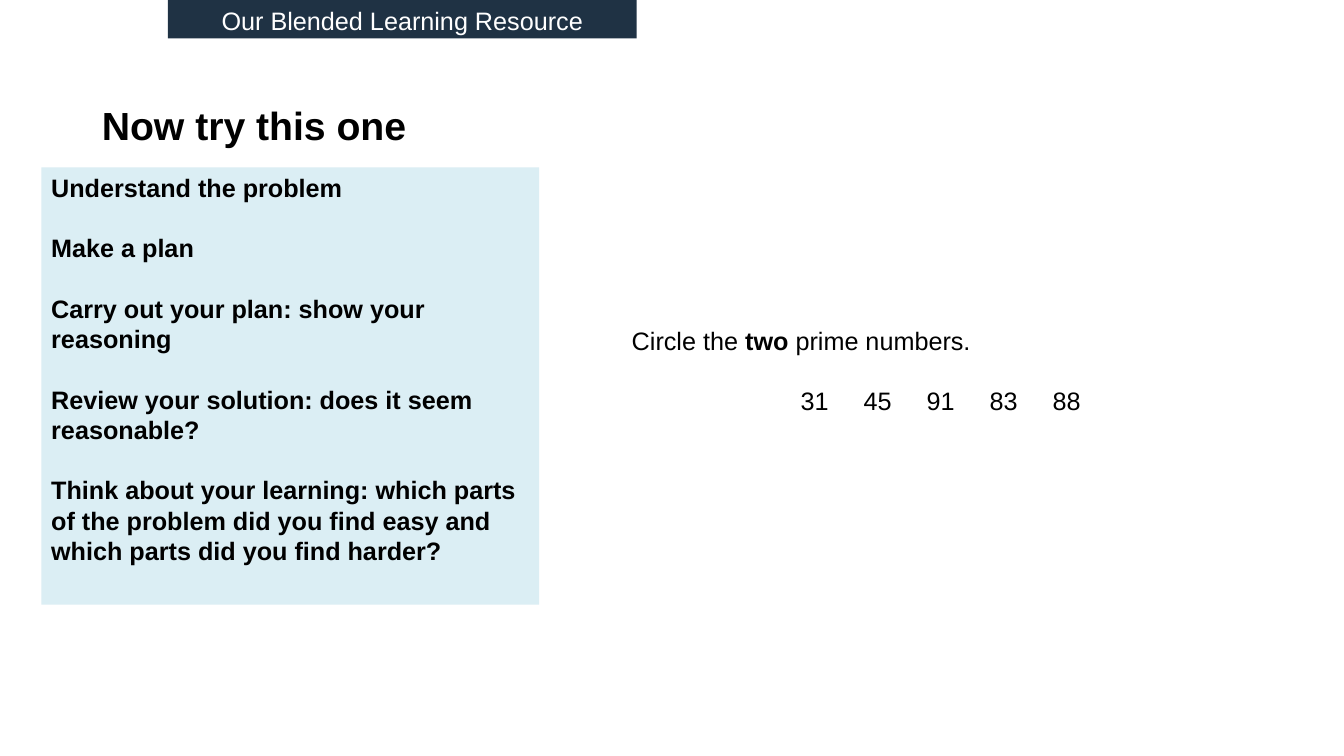
from lxml import etree
from pptx import Presentation
from pptx.dml.color import RGBColor
from pptx.enum import shapes, text
from pptx.oxml import ns
from pptx.util import Pt

BLACK = RGBColor(0, 0, 0)
WHITE = RGBColor(255, 255, 255)
NAVY = RGBColor(0x1F, 0x32, 0x44)
PALE_BLUE = RGBColor(0xDB, 0xEE, 0xF4)

STEPS = [
    "Understand the problem",
    "Make a plan",
    "Carry out your plan: show your reasoning",
    "Review your solution: does it seem reasonable?",
    "Think about your learning: which parts of the problem did you find "
    "easy and which parts did you find harder?",
]
NUMBERS = ["31", "45", "91", "83", "88"]
LINE_GAP = 21.6


def format_runs(p, size=18, color=BLACK, bold=False):
    for r in p.runs:
        r.font.name = "Arial"
        r.font.size = Pt(size)
        r.font.bold = bold
        r.font.color.rgb = color


def add_box(s, left, top, width, height, fill, anchor=text.MSO_ANCHOR.TOP):
    sp = s.shapes.add_shape(shapes.MSO_SHAPE.RECTANGLE,
                            Pt(left), Pt(top), Pt(width), Pt(height))
    sp.shadow.inherit = False
    sp.fill.solid()
    sp.fill.fore_color.rgb = fill
    sp.line.fill.background()
    sp.text_frame.word_wrap = True
    sp.text_frame.vertical_anchor = anchor
    return sp


def add_paragraph(tf, content, first=False, align=text.PP_ALIGN.LEFT, **style):
    p = tf.paragraphs[0] if first else tf.add_paragraph()
    p.text = content
    p.alignment = align
    if not first:
        p.space_before = Pt(LINE_GAP)
    format_runs(p, **style)
    return p


def add_tab_stops(p, start, step, count):
    tabs = etree.SubElement(p._p.get_or_add_pPr(), ns.qn("a:tabLst"))
    for i in range(count):
        etree.SubElement(tabs, ns.qn("a:tab"),
                         pos=str(Pt(start + i * step)), algn="l")


def set_title(s):
    title = s.shapes.title
    title.left, title.top = Pt(65.5), Pt(66.2)
    title.width, title.height = Pt(648), Pt(46)
    tf = title.text_frame
    tf.vertical_anchor = text.MSO_ANCHOR.MIDDLE
    add_paragraph(tf, "Now try this one", first=True, size=28, bold=True)


def add_steps(s):
    tf = add_box(s, 29.5, 119.5, 355.7, 312.5, PALE_BLUE).text_frame
    for i, step in enumerate(STEPS):
        add_paragraph(tf, step, first=i == 0, bold=True)


def add_banner(s):
    tf = add_box(s, 120, 0, 334.8, 27.4, NAVY).text_frame
    add_paragraph(tf, "Our Blended Learning Resource", first=True,
                  align=text.PP_ALIGN.CENTER, color=WHITE)


def add_question(s):
    sp = add_box(s, 444.2, 166.3, 455.8, 196.6, WHITE, text.MSO_ANCHOR.MIDDLE)
    sp.line.color.rgb = WHITE
    sp.line.width = Pt(2)
    p = add_paragraph(sp.text_frame, "Circle the ", first=True)
    for part in ("two", " prime numbers."):
        p.add_run().text = part
    format_runs(p)
    p.runs[1].font.bold = True
    p = add_paragraph(sp.text_frame, "".join("\t" + n for n in NUMBERS))
    add_tab_stops(p, 120.7, 45, len(NUMBERS))


def main():
    prs = Presentation()
    prs.slide_width, prs.slide_height = Pt(960), Pt(540)
    s = prs.slides.add_slide(prs.slide_layouts[5])
    set_title(s)
    add_steps(s)
    add_banner(s)
    add_question(s)
    prs.save("out.pptx")


if __name__ == "__main__":
    main()
